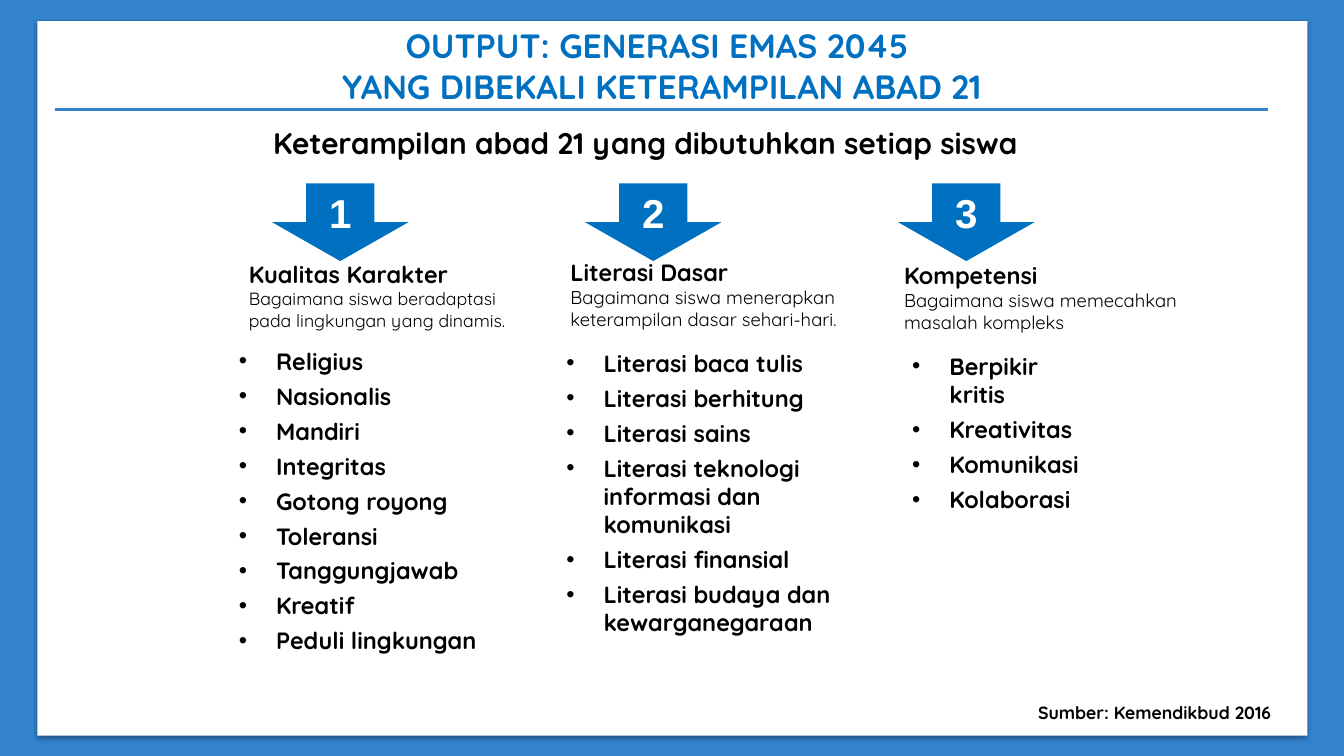
from copy import deepcopy

from lxml import etree
from pptx import Presentation
from pptx.dml.color import RGBColor
from pptx.enum.shapes import MSO_CONNECTOR, MSO_SHAPE
from pptx.enum.text import MSO_ANCHOR, PP_ALIGN
from pptx.oxml.ns import qn
from pptx.util import Inches, Pt

RECTANGLE, DOWN_ARROW = MSO_SHAPE.RECTANGLE, MSO_SHAPE.DOWN_ARROW
STRAIGHT = MSO_CONNECTOR.STRAIGHT
CENTER, MIDDLE = PP_ALIGN.CENTER, MSO_ANCHOR.MIDDLE

FRAME_BLUE = RGBColor(0x33, 0x82, 0xCE)
ACCENT_BLUE = RGBColor(0x00, 0x70, 0xC0)
WHITE = RGBColor(0xFF, 0xFF, 0xFF)
BLACK = RGBColor(0x00, 0x00, 0x00)

SLIDE_WIDTH, SLIDE_HEIGHT = Inches(13.333), Inches(7.5)
INDENT = Inches(0.37)

# Text formats
BOLD = {"name": "Quicksand", "size": Pt(16.8), "bold": True, "color": BLACK}
TITLE = {**BOLD, "size": Pt(24), "color": ACCENT_BLUE}
SUBTITLE = {**BOLD, "size": Pt(21.3)}
SOURCE = {**BOLD, "size": Pt(12.6)}
SMALL = {**BOLD, "size": Pt(12.6), "bold": False}
MEDIUM = {**SMALL, "size": Pt(13.2)}
NUMBER = {**BOLD, "name": "Arial", "size": Pt(28.8), "color": WHITE}

# Each column: heading place, heading spans, list place, list items
COLUMNS = [
    ((17.78, 33.73, 21.9, 10.8),
     [("Kualitas Karakter\n", BOLD),
      ("Bagaimana siswa beradaptasi\npada lingkungan yang dinamis.", SMALL)],
     (17.03, 45.2, 26.4, 42.8),
     ["Religius", "Nasionalis", "Mandiri", "Integritas", "Gotong royong",
      "Toleransi", "Tanggungjawab", "Kreatif", "Peduli lingkungan"]),
    ((41.7, 33.47, 22.43, 11.07),
     [("Literasi Dasar\n", BOLD),
      ("Bagaimana siswa menerapkan\nketerampilan dasar sehari-hari", MEDIUM),
      (".", SMALL)],
     (41.4, 45.47, 25.13, 40),
     ["Literasi baca tulis", "Literasi berhitung", "Literasi sains",
      "Literasi teknologi\ninformasi dan komunikasi", "Literasi finansial",
      "Literasi budaya dan\nkewarganegaraan"]),
    ((66.53, 33.87, 23.25, 11.07),
     [("Kompetensi\n", BOLD),
      ("Bagaimana siswa memecahkan\nmasalah kompleks", MEDIUM)],
     (67.13, 45.87, 14.93, 19.2),
     ["Berpikir kritis", "Kreativitas", "Komunikasi", "Kolaborasi"]),
]


def across(percent):
    return round(SLIDE_WIDTH * percent / 100)


def down(percent):
    return round(SLIDE_HEIGHT * percent / 100)


def place(left, top, width, height):
    """Turn percentages of the slide into lengths."""
    return across(left), down(top), across(width), down(height)


def add_span(para, text, style):
    """Add styled text; each newline becomes a line break of the same size."""
    for index, line in enumerate(text.split("\n")):
        if index:
            para.add_line_break()
            para._p[-1].append(deepcopy(span._r.rPr))
        if line:
            span = para.add_run()
            span.text = line
            for key, value in style.items():
                if key == "color":
                    span.font.color.rgb = value
                else:
                    setattr(span.font, key, value)


def add_bullet(para):
    props = para._p.get_or_add_pPr()
    props.set("marL", str(INDENT))
    props.set("indent", str(-INDENT))
    para.space_after = Pt(4.8)
    etree.SubElement(props, qn("a:buFont"), typeface="Arial")
    etree.SubElement(props, qn("a:buChar"), char="•")


def fill_frame(frame, paragraphs, align=None, bullets=False):
    """Write paragraphs, each a list of (text, style) spans."""
    frame.word_wrap = True
    for index, spans in enumerate(paragraphs):
        para = frame.add_paragraph() if index else frame.paragraphs[0]
        para.alignment = align
        if bullets:
            add_bullet(para)
        for text, style in spans:
            add_span(para, text, style)


def add_text(page, spot, paragraphs, **options):
    box = page.shapes.add_textbox(*place(*spot))
    fill_frame(box.text_frame, paragraphs, **options)


def add_block(page, kind, spot, color):
    block = page.shapes.add_shape(kind, *place(*spot))
    block.shadow.inherit = False
    block.fill.solid()
    block.fill.fore_color.rgb = color
    block.line.fill.background()
    return block


def add_soft_shadow(block):
    effects = block._element.spPr.find(qn("a:effectLst"))
    shadow = etree.SubElement(
        effects, qn("a:outerShdw"), blurRad=str(Pt(3.1)), dist=str(Pt(1.6)),
        dir="5400000", algn="t", rotWithShape="0")
    color = etree.SubElement(shadow, qn("a:srgbClr"), val=str(BLACK))
    etree.SubElement(color, qn("a:alpha"), val="38000")


def add_rule(page, left, right, top):
    rule = page.shapes.add_connector(
        STRAIGHT, across(left), down(top), across(right), down(top))
    rule.line.color.rgb = FRAME_BLUE
    rule.line.width = Pt(2)
    etree.SubElement(rule._element.spPr, qn("a:effectLst"))


def add_arrow(page, number):
    spot = (20.25 + 23.29 * (number - 1), 24.27, 10.13, 10.27)
    arrow = add_block(page, DOWN_ARROW, spot, ACCENT_BLUE)
    arrow.text_frame.vertical_anchor = MIDDLE
    fill_frame(arrow.text_frame, [[(str(number), NUMBER)]], align=CENTER)


def main():
    deck = Presentation()
    deck.slide_width, deck.slide_height = SLIDE_WIDTH, SLIDE_HEIGHT
    page = deck.slides.add_slide(deck.slide_layouts[6])

    # Blue frame and white panel
    add_block(page, RECTANGLE, (0, 0, 100, 100), FRAME_BLUE)
    panel = add_block(page, RECTANGLE, (2.78, 2.8, 94.5, 94.53), WHITE)
    add_soft_shadow(panel)

    # Title, rule and subtitle
    add_text(page, (1.5, 2.67, 95.48, 16.67),
             [[("OUTPUT: GENERASI EMAS 2045 ", TITLE)],
              [("YANG DIBEKALI KETERAMPILAN ABAD 21", TITLE)]], align=CENTER)
    add_rule(page, 4.13, 94.35, 14.53)
    add_text(page, (17.7, 15.87, 60.68, 6.13),
             [[("Keterampilan abad 21 yang dibutuhkan setiap siswa", SUBTITLE)]],
             align=CENTER)

    # Three skill columns
    for number, column in enumerate(COLUMNS, start=1):
        heading_spot, heading, list_spot, items = column
        add_arrow(page, number)
        add_text(page, heading_spot, [heading])
        add_text(page, list_spot, [[(item, BOLD)] for item in items],
                 bullets=True)

    # Source line
    add_text(page, (76.5, 92.13, 22.05, 4.27),
             [[("Sumber: Kemendikbud 2016", SOURCE)]])
    deck.save("out.pptx")


if __name__ == "__main__":
    main()
